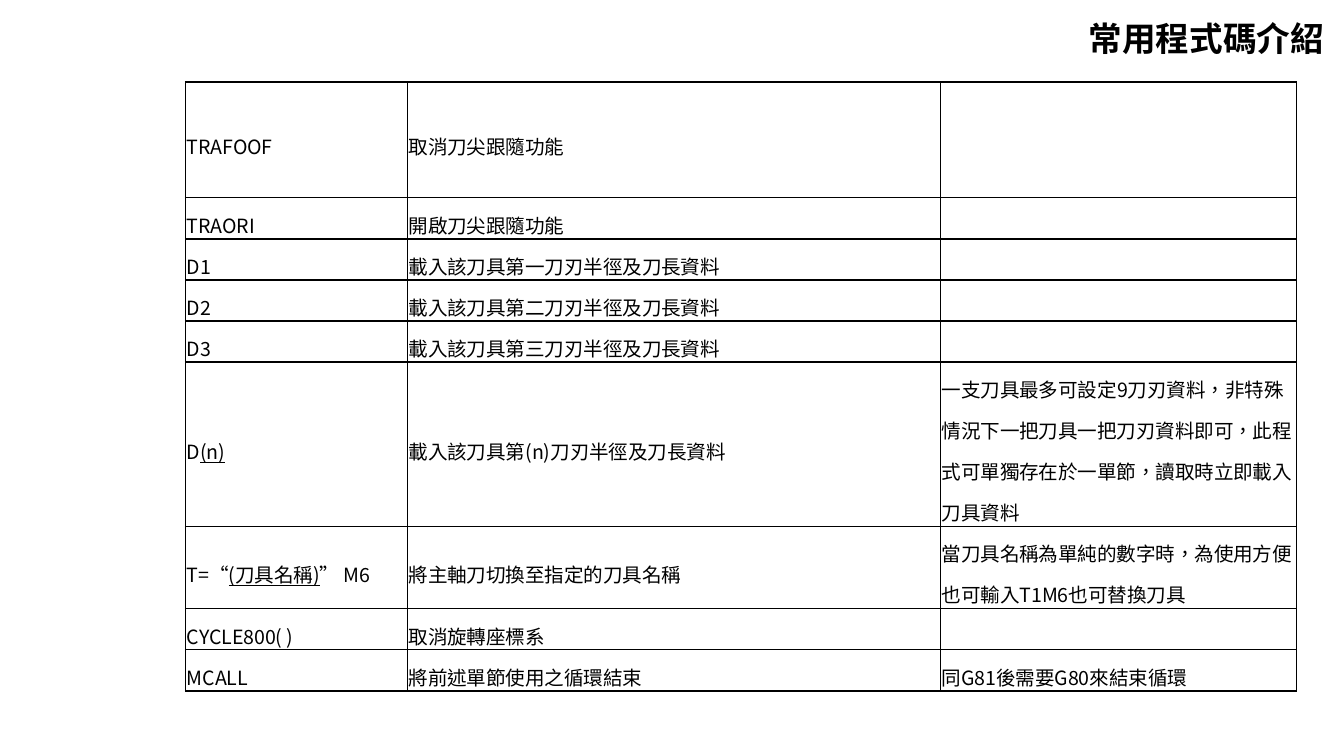
import pptx
import pptx.enum.text
import pptx.oxml
import pptx.oxml.ns
import pptx.util

Pt = pptx.util.Pt
qn = pptx.oxml.ns.qn
ALIGN = pptx.enum.text.PP_ALIGN
ANCHOR = pptx.enum.text.MSO_ANCHOR

FONT = "Noto Sans CJK SC"
COLORS = {"text": "000000", "border": "000000"}
TITLE_FORMAT = {"name": FONT, "size": Pt(18), "bold": True}
CELL_FORMAT = {"name": FONT, "size": Pt(10.5)}

LINE = 22  # exact line pitch, which also sets the row heights
COL_WIDTHS = [118.8, 285.6, 190.8]
ROW_HEIGHTS = [62] + [LINE] * 4 + [LINE * 4, LINE * 2] + [LINE] * 2

# Each cell is a list of runs; a tuple marks an underlined run
ROWS = [
    (["TRAFOOF"], ["取消刀尖跟隨功能"], []),
    (["TRAORI"], ["開啟刀尖跟隨功能"], []),
    (["D1"], ["載入該刀具第一刀刃半徑及刀長資料"], []),
    (["D2"], ["載入該刀具第二刀刃半徑及刀長資料"], []),
    (["D3"], ["載入該刀具第三刀刃半徑及刀長資料"], []),
    (["D", ("(n)",)], ["載入該刀具第(n)刀刃半徑及刀長資料"],
     ["一支刀具最多可設定9刀刃資料，非特殊情況下一把刀具一把刀刃資料即可，"
      "此程式可單獨存在於一單節，讀取時立即載入刀具資料"]),
    (["T=“", ("(刀具名稱)",), "” M6"], ["將主軸刀切換至指定的刀具名稱"],
     ["當刀具名稱為單純的數字時，為使用方便也可輸入T1M6也可替換刀具"]),
    (["CYCLE800( )"], ["取消旋轉座標系"], []),
    (["MCALL"], ["將前述單節使用之循環結束"], ["同G81後需要G80來結束循環"]),
]


def add_run(p, text, formats, underline=False):
    r = p.add_run()
    r.text = text
    for name, value in formats.items():
        setattr(r.font, name, value)
    if underline:
        r.font.underline = True
    r.font.color.rgb = pptx.dml.color.RGBColor.from_string(COLORS["text"])
    # East Asian typeface and language
    rPr = r._r.get_or_add_rPr()
    rPr.set("lang", "zh-TW")
    ea = pptx.oxml.parse_xml(
        '<a:ea xmlns:a="http://schemas.openxmlformats.org/drawingml/2006/main" '
        f'typeface="{FONT}"/>')
    rPr.find(qn("a:latin")).addnext(ea)


def add_title(s, text):
    sp = s.shapes.title
    box = {"left": 271.4, "top": 7.9, "width": 445, "height": 25.2}
    for name, value in box.items():
        setattr(sp, name, Pt(value))
    tf = sp.text_frame
    tf.auto_size = pptx.enum.text.MSO_AUTO_SIZE.NONE
    tf.vertical_anchor = ANCHOR.MIDDLE
    p = tf.paragraphs[0]
    p.alignment = ALIGN.RIGHT
    add_run(p, text, TITLE_FORMAT)


def set_borders(cell):
    tcPr = cell._tc.get_or_add_tcPr()
    for i, side in enumerate(("lnL", "lnR", "lnT", "lnB")):
        tcPr.insert(i, pptx.oxml.parse_xml(
            f'<a:{side} xmlns:a="http://schemas.openxmlformats.org/drawingml/2006/main" '
            f'w="{Pt(1)}"><a:solidFill><a:srgbClr val="{COLORS["border"]}"/>'
            f'</a:solidFill></a:{side}>'))


def fill_cell(cell, runs, anchor):
    layout = {"margin_left": Pt(0.7), "margin_right": Pt(0.7),
              "margin_top": 0, "margin_bottom": 0, "vertical_anchor": anchor}
    for name, value in layout.items():
        setattr(cell, name, value)
    cell.fill.background()
    set_borders(cell)
    p = cell.text_frame.paragraphs[0]
    p.line_spacing = Pt(LINE)
    for run in runs:
        underline = isinstance(run, tuple)
        add_run(p, run[0] if underline else run, CELL_FORMAT, underline)


def add_code_table(s):
    frame = s.shapes.add_table(
        len(ROWS), len(COL_WIDTHS), Pt(99.4), Pt(43.9),
        Pt(sum(COL_WIDTHS)), Pt(sum(ROW_HEIGHTS)))
    table = frame.table
    table.first_row = False
    table.horz_banding = False
    for column, width in zip(table.columns, COL_WIDTHS):
        column.width = Pt(width)
    for row, height, contents in zip(table.rows, ROW_HEIGHTS, ROWS):
        row.height = Pt(height)
        for i, (cell, runs) in enumerate(zip(row.cells, contents)):
            fill_cell(cell, runs, ANCHOR.TOP if i == 2 else ANCHOR.MIDDLE)


def main():
    prs = pptx.Presentation()
    prs.slide_width, prs.slide_height = Pt(720), Pt(405)
    s = prs.slides.add_slide(prs.slide_layouts[5])
    add_title(s, "常用程式碼介紹")
    add_code_table(s)
    prs.save("out.pptx")


if __name__ == "__main__":
    main()
